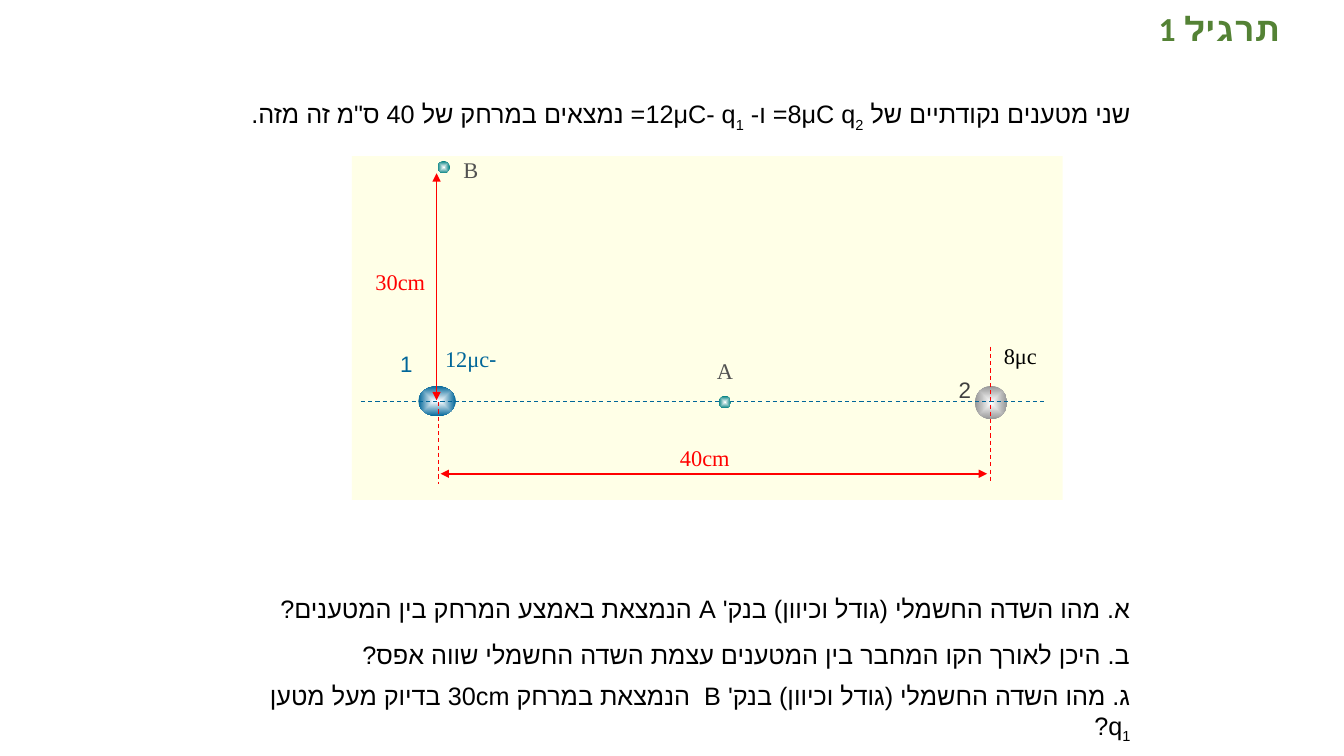
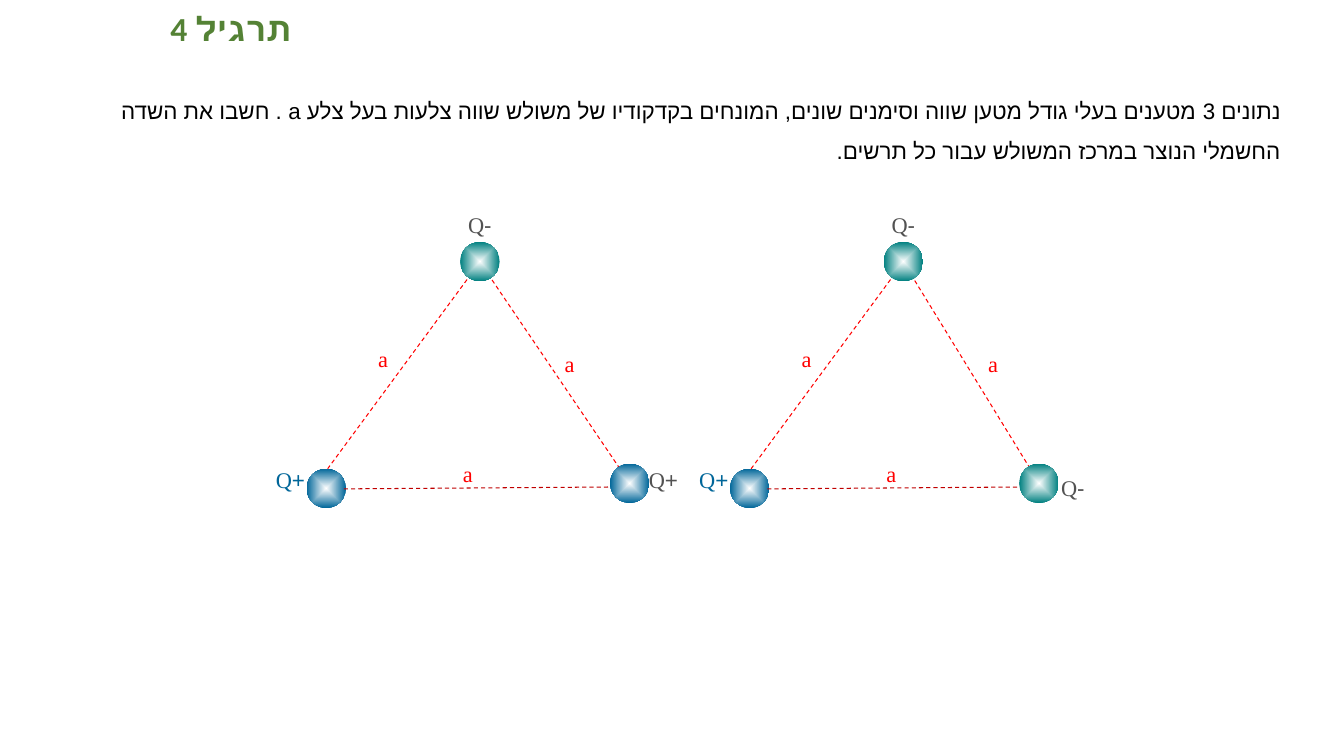
from lxml.etree import SubElement
from pptx import Presentation
from pptx.dml.color import RGBColor
from pptx.enum.dml import MSO_LINE
from pptx.enum.shapes import MSO_CONNECTOR, MSO_SHAPE
from pptx.enum.text import MSO_ANCHOR, PP_ALIGN
from pptx.oxml.ns import qn
from pptx.util import Inches, Pt

COLORS = {
    "title": "548235", "text": "000000", "panel": "FFFFE7", "white": "FFFFFF",
    "blue": "006699", "teal": "008080", "silver": "969696", "red": "FF0000",
    "dark_red": "C00000", "gray": "525252", "dark_gray": "404040",
}


def rgb(name):
    return RGBColor.from_string(COLORS[name])


class Deck:
    """Shared style, plus the slide being drawn."""

    def __init__(self):
        self.prs = Presentation()
        self.prs.slide_width = Inches(13.33)
        self.prs.slide_height = Inches(7.5)
        self.s = None

    def add_run(self, p, text, size, font, color, cs=None):
        r = p.add_run()
        r.text = text
        r.font.size = Pt(size)
        r.font.name = font
        r.font.color.rgb = rgb(color)
        # Hebrew letters take the complex-script font
        SubElement(r._r.get_or_add_rPr(), qn("a:cs")).set("typeface", cs or font)
        return r

    def set_rtl(self, p):
        p._p.get_or_add_pPr().set("rtl", "1")

    def slide(self, title, align, rtl=False):
        self.s = self.prs.slides.add_slide(self.prs.slide_layouts[5])
        sp = self.s.shapes.title
        sp.left, sp.top = Inches(1.59), Inches(0.11)
        sp.width, sp.height = Inches(11.2), Inches(0.39)
        tf = sp.text_frame
        tf.vertical_anchor = MSO_ANCHOR.MIDDLE
        p = tf.paragraphs[0]
        p.alignment = align
        p.line_spacing = 0.9
        if rtl:
            self.set_rtl(p)
        self.add_run(p, title, 24, "Calibri", "title").font.bold = True

    def text_box(self, x, y, w, h):
        tf = self.s.shapes.add_textbox(
            Inches(x), Inches(y), Inches(w), Inches(h)).text_frame
        tf.word_wrap = True
        return tf

    def body(self, x, y, w, h, paragraphs, size):
        """Each paragraph is a list of runs; every second run is a subscript."""
        tf = self.text_box(x, y, w, h)
        for i, runs in enumerate(paragraphs):
            p = tf.paragraphs[0] if i == 0 else tf.add_paragraph()
            p.alignment = PP_ALIGN.RIGHT
            p.line_spacing = 1.5
            self.set_rtl(p)
            for j, text in enumerate(runs):
                r = self.add_run(p, text, size, "Arial", "text")
                if j % 2:
                    r._r.get_or_add_rPr().set("baseline", "-25000")
        return tf

    def label(self, cx, y, text, color):
        p = self.text_box(cx - 0.45, y, 0.9, 0.44).paragraphs[0]
        p.alignment = PP_ALIGN.CENTER
        p.space_after = Pt(10)
        self.set_rtl(p)
        self.add_run(p, text, 16, "Times New Roman", color, cs="Arial")

    def shape(self, kind, x, y, w, h):
        sp = self.s.shapes.add_shape(kind, Inches(x), Inches(y), Inches(w), Inches(h))
        sp.shadow.inherit = False
        sp.line.fill.background()
        return sp

    def panel(self, x, y, w, h):
        sp = self.shape(MSO_SHAPE.RECTANGLE, x, y, w, h)
        sp.fill.solid()
        sp.fill.fore_color.rgb = rgb("panel")

    def charge(self, x, y, w, h, color):
        """A ball, white in the middle and coloured at the rim."""
        sp = self.shape(MSO_SHAPE.OVAL, x, y, w, h)
        sp.fill.gradient()
        for stop, name in zip(sp.fill.gradient_stops, ("white", color)):
            stop.color.rgb = rgb(name)
        grad = sp._element.spPr.find(qn("a:gradFill"))
        grad.remove(grad.find(qn("a:lin")))
        radial = SubElement(grad, qn("a:path"))
        radial.set("path", "shape")
        rect = SubElement(radial, qn("a:fillToRect"))
        for side in "ltrb":
            rect.set(side, "50000")

    def line(self, x1, y1, x2, y2, color="red", width=0.75, arrows=False):
        """A dashed guide, or a solid dimension line with two arrowheads."""
        c = self.s.shapes.add_connector(
            MSO_CONNECTOR.STRAIGHT, Inches(x1), Inches(y1), Inches(x2), Inches(y2))
        c.line.color.rgb = rgb(color)
        c.line.width = Pt(width)
        if arrows:
            ln = c.line._get_or_add_ln()
            for end in ("a:headEnd", "a:tailEnd"):
                SubElement(ln, qn(end)).set("type", "triangle")
        else:
            c.line.dash_style = MSO_LINE.DASH
        SubElement(c._element.spPr, qn("a:effectLst"))

    def triangle(self, x, right_dx, right_color, right_label, right_label_y):
        """Three charges joined by dashed sides; x is the left charge's edge."""
        d = 0.39
        right = x + right_dx
        apex = x + 1.72
        self.charge(x, 4.65, d, d, "blue")
        self.line(x + 0.37, 4.85, right + 0.2, 4.83, "dark_red")
        self.line(apex, 2.6, x + 0.21, 4.65)
        self.line(apex, 2.6, right + 0.2, 4.8)
        self.charge(right, 4.6, d, d, right_color)
        self.charge(apex - d / 2, 2.4, d, d, "teal")
        self.label(x - 0.16, 4.58, "+Q", "blue")
        self.label(apex, 2.05, "-Q", "gray")
        self.label(right + 0.53, right_label_y, right_label, "gray")
        for dx, y in ((0.76, 3.38), (1.6, 4.52), (2.61, 3.42)):
            self.label(x + dx, y, "a", "red")


def two_charges(deck):
    deck.slide("תרגיל 1", PP_ALIGN.RIGHT)
    deck.body(2.3, 0.76, 9.01, 0.6, [
        ["שני מטענים נקודתיים של 8μC q", "2", "= ו- 12μC- q", "1",
         "= נמצאים במרחק של 40 ס\"מ זה מזה."],
    ], 18)

    # Charges and guides
    deck.panel(3.49, 1.55, 7.05, 3.41)
    deck.charge(4.15, 3.83, 0.37, 0.3, "blue")
    deck.charge(9.67, 3.83, 0.32, 0.33, "silver")
    deck.line(3.58, 3.98, 10.36, 3.98, "blue")
    deck.line(4.35, 3.99, 4.35, 4.8)
    deck.line(9.82, 3.44, 9.82, 4.8)

    # Dimensions and field points
    deck.line(4.37, 4.7, 9.79, 4.7, width=1.5, arrows=True)
    deck.line(4.33, 1.72, 4.33, 3.97, arrows=True)
    for x, y in ((7.13, 3.93), (4.34, 1.6)):
        deck.charge(x, y, 0.12, 0.12, "teal")

    # Labels
    for cx, y, text, color in (
        (4.67, 3.38, "-12μc", "blue"), (10.12, 3.35, "8μc", "text"),
        (4.03, 3.42, "1", "blue"), (9.57, 3.68, "2", "dark_gray"),
        (7.19, 3.49, "A", "gray"), (4.67, 1.5, "B", "gray"),
        (6.99, 4.36, "40cm", "red"), (3.97, 2.61, "30cm", "red"),
    ):
        deck.label(cx, y, text, color)

    # Questions
    tf = deck.body(2.3, 5.69, 9.01, 1.45, [
        ["א. מהו השדה החשמלי (גודל וכיוון) בנק' A הנמצאת באמצע המרחק בין המטענים?"],
        ["ב. היכן לאורך הקו המחבר בין המטענים עצמת השדה החשמלי שווה אפס?"],
        ["ג. מהו השדה החשמלי (גודל וכיוון) בנק' B  הנמצאת במרחק 30cm בדיוק מעל מטען q",
         "1", "?"],
    ], 18)
    last = tf.paragraphs[-1]
    last.line_spacing = 0.9
    last.space_before = Pt(10)


def charge_triangles(deck):
    deck.slide("תרגיל 4", PP_ALIGN.LEFT, rtl=True)
    deck.body(0.79, 0.78, 12.01, 1, [
        ["נתונים 3 מטענים בעלי גודל מטען שווה וסימנים שונים, המונחים בקדקודיו של "
         "משולש שווה צלעות בעל צלע a . חשבו את השדה החשמלי הנוצר במרכז המשולש "
         "עבור כל תרשים."],
    ], 16)
    deck.triangle(7.24, 2.87, "teal", "-Q", 4.65)
    deck.triangle(3.04, 3.01, "blue", "+Q", 4.58)


def main():
    deck = Deck()
    two_charges(deck)
    charge_triangles(deck)
    deck.prs.save("out.pptx")


if __name__ == "__main__":
    main()
